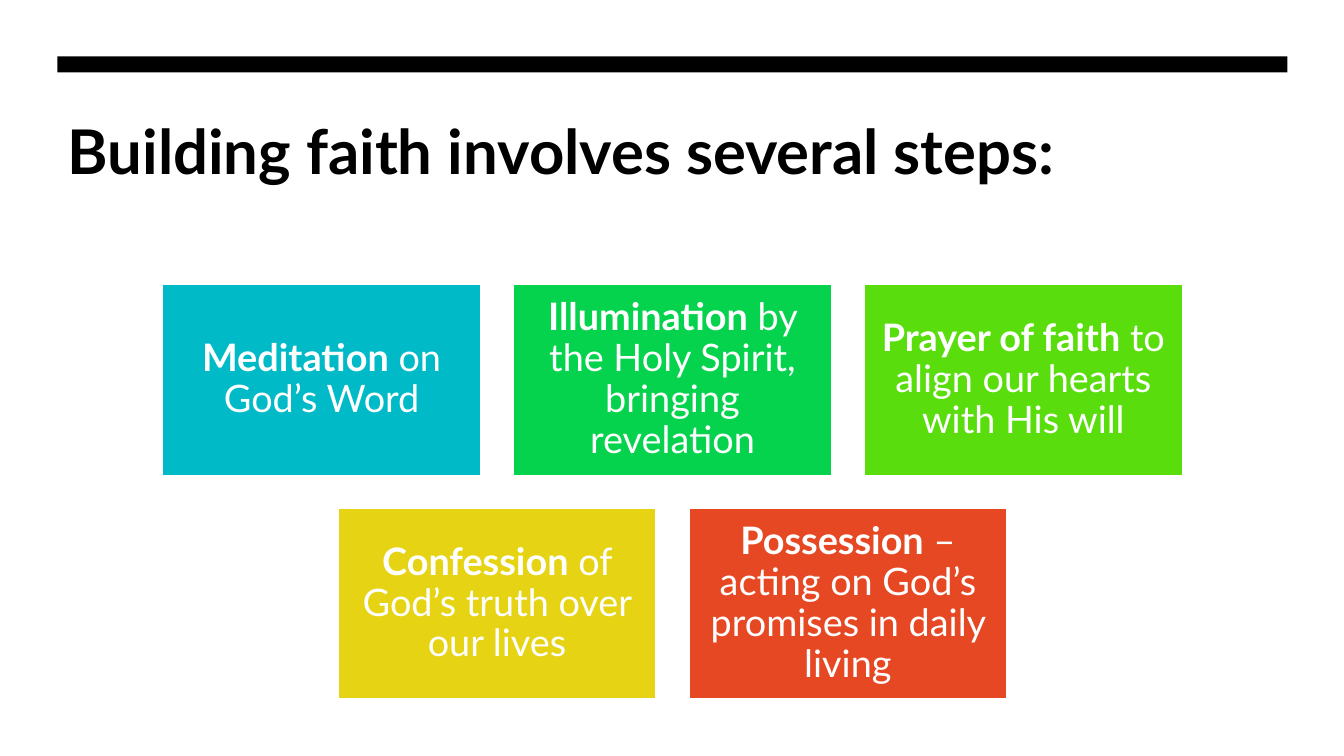
from pptx import Presentation
from pptx.dml.color import RGBColor
from pptx.enum.shapes import MSO_SHAPE
from pptx.enum.text import MSO_ANCHOR, MSO_AUTO_SIZE, PP_ALIGN
from pptx.util import Inches, Pt

RECTANGLE = MSO_SHAPE.RECTANGLE
TOP, MIDDLE = MSO_ANCHOR.TOP, MSO_ANCHOR.MIDDLE
LEFT, CENTER = PP_ALIGN.LEFT, PP_ALIGN.CENTER
NO_AUTOFIT = MSO_AUTO_SIZE.NONE
TITLE_ONLY = 5

FONT = "Lato"
COLORS = {
    "white": "FFFFFF",
    "black": "000000",
    "teal": "00BAC8",
    "green": "06D34D",
    "lime": "59DD0C",
    "yellow": "E6D313",
    "red": "E64823",
}

SLIDE_WIDTH, SLIDE_HEIGHT = 13.33, 7.5
MARGIN, CONTENT_WIDTH = 0.57, 12.2
CARD_WIDTH, CARD_HEIGHT, CARD_GAP = 3.16, 1.9, 0.32
CARDS_TOP, CARDS_CENTER = 2.82, 6.67

STEP_ROWS = [
    [
        ("Meditation", " on God’s Word", "teal"),
        ("Illumination", " by the Holy Spirit, bringing revelation", "green"),
        ("Prayer of faith", " to align our hearts with His will", "lime"),
    ],
    [
        ("Confession", " of God’s truth over our lives", "yellow"),
        ("Possession", " – acting on God’s promises in daily living", "red"),
    ],
]


def color(name):
    return RGBColor.from_string(COLORS[name])


def format_run(run, size, color_name, bold):
    run.font.name = FONT
    run.font.size = Pt(size)
    run.font.bold = bold
    run.font.color.rgb = color(color_name)


def add_rectangle(slide, left, top, width, height, fill):
    shape = slide.shapes.add_shape(
        RECTANGLE, Inches(left), Inches(top), Inches(width), Inches(height)
    )
    shape.shadow.inherit = False
    shape.fill.solid()
    shape.fill.fore_color.rgb = color(fill)
    shape.line.fill.background()
    return shape


def set_title(slide, text):
    title = slide.shapes.title
    title.left, title.top = Inches(MARGIN), Inches(1.07)
    title.width, title.height = Inches(CONTENT_WIDTH), Inches(1.6)
    text_frame = title.text_frame
    text_frame.text = text
    text_frame.word_wrap = True
    text_frame.auto_size = NO_AUTOFIT
    text_frame.vertical_anchor = TOP
    paragraph = text_frame.paragraphs[0]
    paragraph.alignment = LEFT
    format_run(paragraph.runs[0], 44, "black", True)


def add_step_card(slide, left, top, keyword, rest, fill):
    """Add a coloured card whose text opens with a bold keyword."""
    card = add_rectangle(slide, left, top, CARD_WIDTH, CARD_HEIGHT, fill)
    card.line.color.rgb = color("white")
    card.line.width = Pt(1.5)
    text_frame = card.text_frame
    text_frame.word_wrap = True
    text_frame.vertical_anchor = MIDDLE
    text_frame.margin_left = text_frame.margin_right = Inches(0.11)
    text_frame.margin_top = text_frame.margin_bottom = Inches(0.11)
    paragraph = text_frame.paragraphs[0]
    paragraph.alignment = CENTER
    paragraph.line_spacing = 0.9
    for text, bold in ((keyword, True), (rest, False)):
        run = paragraph.add_run()
        run.text = text
        format_run(run, 27, "white", bold)


def add_step_rows(slide):
    """Lay the cards out in rows, each row centred on the same axis."""
    for row_index, steps in enumerate(STEP_ROWS):
        row_width = len(steps) * (CARD_WIDTH + CARD_GAP) - CARD_GAP
        row_left = CARDS_CENTER - row_width / 2
        top = CARDS_TOP + row_index * (CARD_HEIGHT + CARD_GAP)
        for index, (keyword, rest, fill) in enumerate(steps):
            left = row_left + index * (CARD_WIDTH + CARD_GAP)
            add_step_card(slide, left, top, keyword, rest, fill)


def main():
    presentation = Presentation()
    presentation.slide_width = Inches(SLIDE_WIDTH)
    presentation.slide_height = Inches(SLIDE_HEIGHT)
    slide = presentation.slides.add_slide(presentation.slide_layouts[TITLE_ONLY])
    slide.background.fill.solid()
    slide.background.fill.fore_color.rgb = color("white")
    set_title(slide, "Building faith involves several steps:")
    add_rectangle(slide, MARGIN, 0.56, CONTENT_WIDTH, 0.16, "black")
    add_step_rows(slide)
    presentation.save("out.pptx")


if __name__ == "__main__":
    main()
